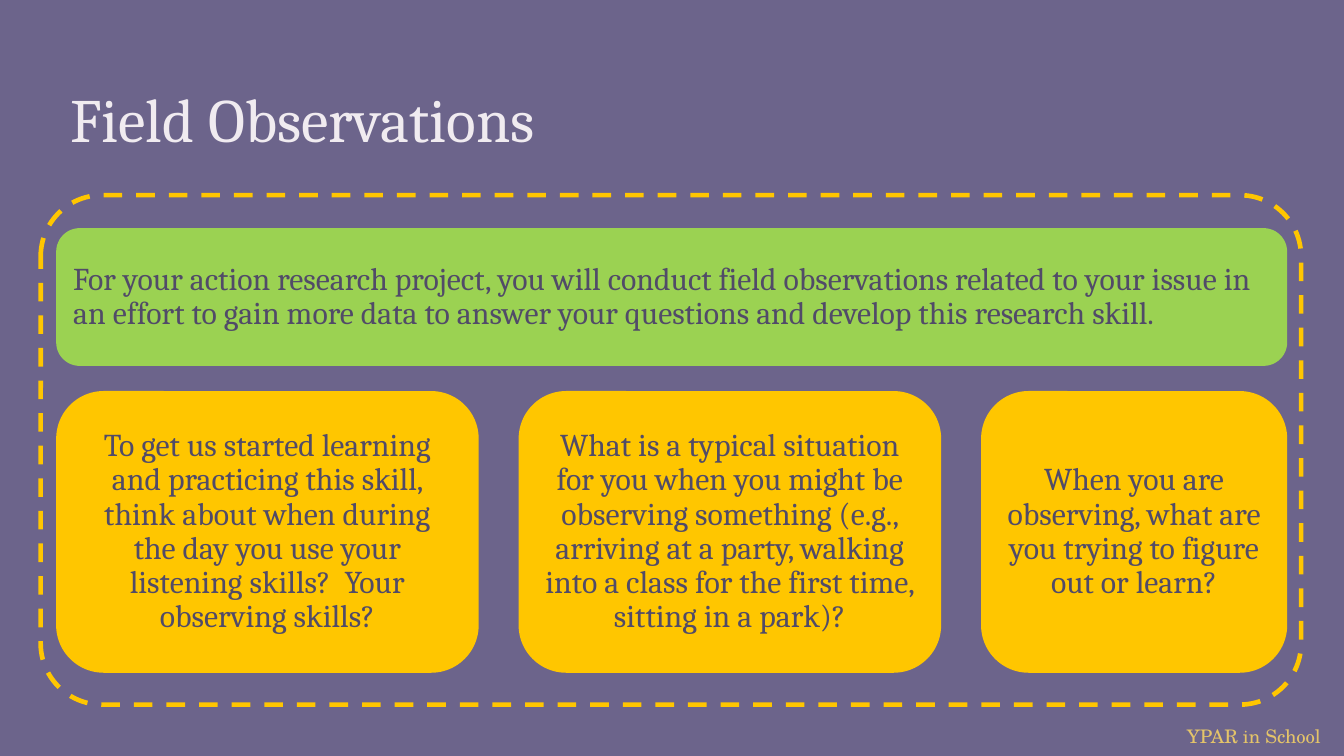
from dataclasses import dataclass

from pptx import Presentation
from pptx import util as u
from pptx.dml.color import RGBColor
from pptx.enum import dml, shapes, text


@dataclass(frozen=True)
class Theme:
    background: str = "6C648B"
    title_color: str = "F0EBF0"
    body_color: str = "514B68"
    footer_color: str = "E4C469"
    banner_color: str = "9BD252"
    card_color: str = "FFC600"
    font: str = "Cambria"
    footer_font: str = "TeX Gyre Schola"
    title_size: float = 33
    body_size: float = 17
    footer_size: float = 10


def color(value):
    return RGBColor.from_string(value)


def write_text(frame, words, *, font, size, fill, align=text.PP_ALIGN.LEFT,
               anchor=text.MSO_ANCHOR.TOP, inset=0.25, line_spacing=1.0):
    frame.word_wrap = True
    frame.auto_size = text.MSO_AUTO_SIZE.NONE
    frame.vertical_anchor = anchor
    frame.margin_left = frame.margin_right = u.Cm(inset)
    frame.margin_top = frame.margin_bottom = u.Cm(inset)
    paragraph = frame.paragraphs[0]
    paragraph.text = words
    paragraph.alignment = align
    paragraph.line_spacing = line_spacing
    paragraph.font.name = font
    paragraph.font.size = u.Pt(size)
    paragraph.font.color.rgb = color(fill)


class SlideBuilder:
    def __init__(self, slide, theme):
        self.slide = slide
        self.theme = theme
        background = slide.background.fill
        background.solid()
        background.fore_color.rgb = color(theme.background)

    def title(self, words, left, top, width, height):
        title = self.slide.shapes.title
        title.left, title.top = u.Cm(left), u.Cm(top)
        title.width, title.height = u.Cm(width), u.Cm(height)
        write_text(title.text_frame, words, font=self.theme.font,
                   size=self.theme.title_size, fill=self.theme.title_color,
                   anchor=text.MSO_ANCHOR.BOTTOM)

    def footer(self, words, left, top, width, height):
        box = self.slide.shapes.add_textbox(*map(u.Cm, (left, top, width, height)))
        write_text(box.text_frame, words, font=self.theme.footer_font,
                   size=self.theme.footer_size, fill=self.theme.footer_color, inset=0.2)

    def rounded(self, left, top, width, height, line_color, line_width=1):
        shape = self.slide.shapes.add_shape(
            shapes.MSO_SHAPE.ROUNDED_RECTANGLE, *map(u.Cm, (left, top, width, height)))
        shape.shadow.inherit = False
        shape.line.color.rgb = color(line_color)
        shape.line.width = u.Pt(line_width)
        return shape

    def panel(self, words, left, top, width, height, fill, align):
        shape = self.rounded(left, top, width, height, fill)
        shape.fill.solid()
        shape.fill.fore_color.rgb = color(fill)
        write_text(shape.text_frame, words, font=self.theme.font,
                   size=self.theme.body_size, fill=self.theme.body_color, align=align,
                   anchor=text.MSO_ANCHOR.MIDDLE, inset=0.18, line_spacing=0.9)

    def dashed_frame(self, left, top, width, height):
        shape = self.rounded(left, top, width, height, self.theme.card_color, 2.5)
        shape.adjustments[0] = 0.12
        shape.fill.background()
        shape.line.dash_style = dml.MSO_LINE.DASH


def main():
    presentation = Presentation()
    presentation.slide_width, presentation.slide_height = u.Cm(25.4), u.Cm(14.29)
    theme = Theme()
    builder = SlideBuilder(
        presentation.slides.add_slide(presentation.slide_layouts[5]), theme)

    left, width, gap = 1.08, 23.23, 0.79
    builder.footer("YPAR in School", 22.23, 13.51, 3.17, 0.69)
    builder.title("Field Observations", left, 1.27, width, 1.9)
    builder.panel(
        "For your action research project, you will conduct field observations "
        "related to your issue in an effort to gain more data to answer your "
        "questions and develop this research skill.",
        left, 4.33, width, 2.57, theme.banner_color, text.PP_ALIGN.LEFT)

    cards = [
        (7.95, "To get us started learning and practicing this skill, think about "
               "when during the day you use your listening skills?  Your observing "
               "skills?"),
        (7.95, "What is a typical situation for you when you might be observing "
               "something (e.g., arriving at a party, walking into a class for the "
               "first time, sitting in a park)?"),
        (5.75, "When you are observing, what are you trying to figure out or learn?"),
    ]
    card_left = left
    for card_width, words in cards:
        builder.panel(words, card_left, 7.41, card_width, 5.29,
                      theme.card_color, text.PP_ALIGN.CENTER)
        card_left += card_width + gap

    builder.dashed_frame(0.77, 3.69, 23.82, 9.63)
    presentation.save("out.pptx")


if __name__ == "__main__":
    main()
